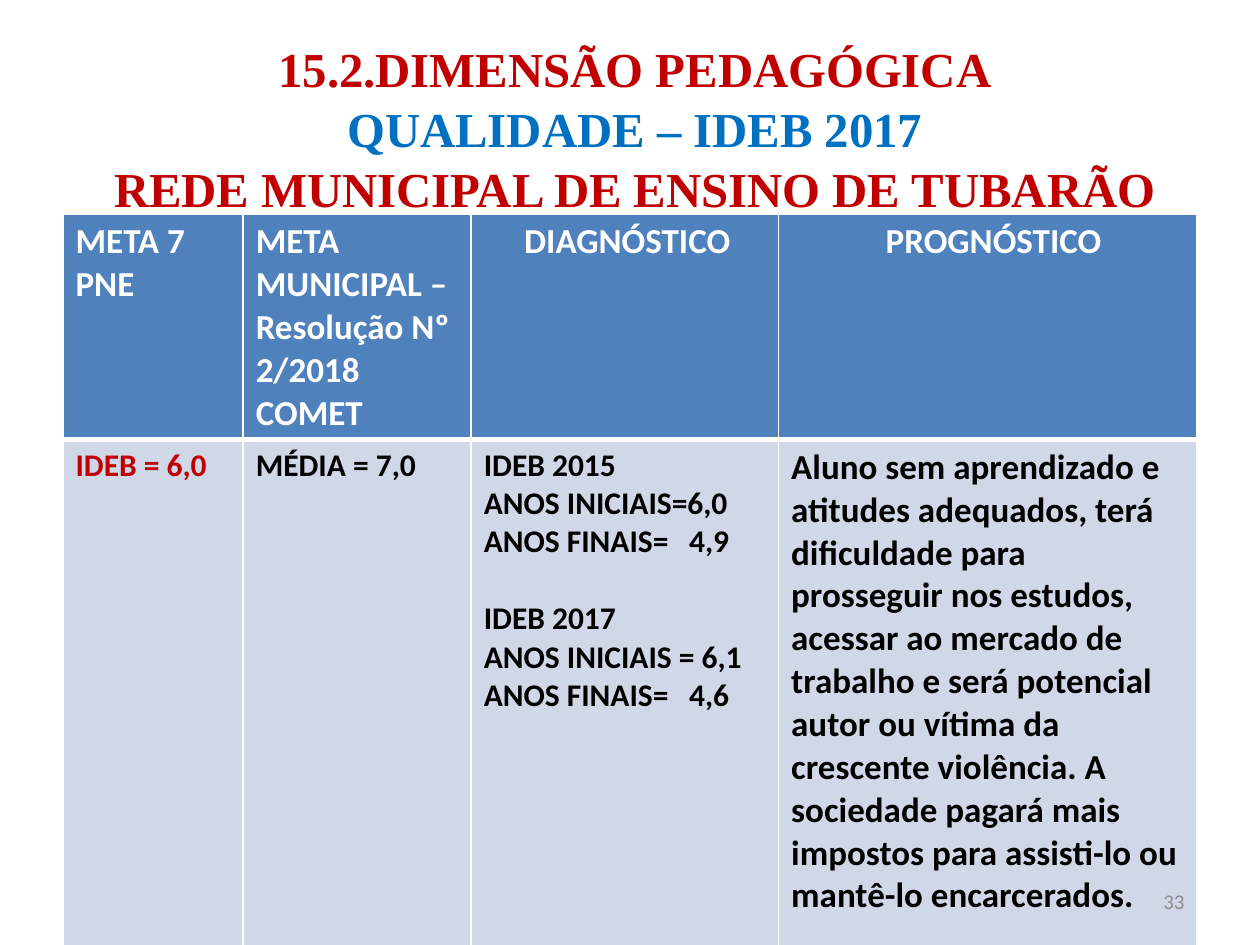
"""Build the slide on the IDEB 2017 goals of the municipal schools."""
import pptx
import pptx.util
import pptx.dml.color
import pptx.enum.text
import pptx.oxml
import pptx.oxml.ns

Inches = pptx.util.Inches
Pt = pptx.util.Pt
Align = pptx.enum.text.PP_ALIGN
Anchor = pptx.enum.text.MSO_ANCHOR


def hue(code):
    return pptx.dml.color.RGBColor.from_string(code)


def write(par, text, size=20, color="000000", font="Calibri", bold=True,
          align=Align.LEFT, pitch=None, before=0):
    par.alignment = align
    par.space_before = Pt(before)
    if pitch:
        par.line_spacing = Pt(pitch)
    run = par.add_run()
    run.text = text
    run.font.size = Pt(size)
    run.font.name = font
    run.font.bold = bold
    run.font.color.rgb = hue(color)


deck = pptx.Presentation()
deck.slide_width, deck.slide_height = Inches(10), Inches(7.5)
slide = deck.slides.add_slide(deck.slide_layouts[6])

title = slide.shapes.add_textbox(Inches(0.51), Inches(0.29), Inches(9), Inches(1.25))
frame = title.text_frame
frame.word_wrap = True
frame.vertical_anchor = Anchor.TOP
frame.margin_top = frame.margin_bottom = frame.margin_right = 0
frame.margin_left = Inches(0.06)
lines = [
    ("15.2.DIMENSÃO PEDAGÓGICA", "C00000"),
    ("QUALIDADE – IDEB 2017", "0070C0"),
    ("REDE MUNICIPAL DE ENSINO DE TUBARÃO", "C00000"),
]
for i, (text, color) in enumerate(lines):
    par = frame.add_paragraph() if i else frame.paragraphs[0]
    write(par, text, size=27.9, color=color, font="Times New Roman",
          align=Align.CENTER, pitch=34.5)

grid = slide.shapes.add_table(2, 4, Inches(0.5), Inches(1.7), Inches(9), Inches(5.81)).table
for col, width in zip(grid.columns, [1.43, 1.81, 2.44, 3.32]):
    col.width = Inches(width)
for row, height in zip(grid.rows, [1.79, 4.02]):
    row.height = Inches(height)

heads = [
    ("META 7 PNE", 0.1),
    ("META MUNICIPAL – Resolução Nº 2/2018 COMET", 0.1),
    ("DIAGNÓSTICO", 0.42),
    ("PROGNÓSTICO", 0.85),
]
for c, (text, left) in enumerate(heads):
    cell = grid.cell(0, c)
    cell.margin_left = Inches(left)
    write(cell.text_frame.paragraphs[0], text, color="FFFFFF")

scores = ["IDEB 2015", "ANOS INICIAIS=6,0", "ANOS FINAIS=\t4,9",
          "IDEB 2017", "ANOS INICIAIS = 6,1", "ANOS FINAIS=\t4,6"]
future = ("Aluno sem aprendizado e atitudes adequados, terá dificuldade para "
          "prosseguir nos estudos, acessar ao mercado de trabalho e será potencial "
          "autor ou vítima da crescente violência. A sociedade pagará mais impostos "
          "para assisti-lo ou mantê-lo encarcerados.")
body = [(["IDEB = 6,0"], 18, "C00000"), (["MÉDIA = 7,0"], 18, "000000"),
        (scores, 18, "000000"), ([future], 20, "000000")]
space = pptx.oxml.ns.nsdecls("a")
for c, (texts, size, color) in enumerate(body):
    frame = grid.cell(1, c).text_frame
    for i, text in enumerate(texts):
        par = frame.add_paragraph() if i else frame.paragraphs[0]
        write(par, text, size=size, color=color, before=22 if i == 3 else 0)
        if "\t" in text:
            stop = f'<a:tabLst {space}><a:tab pos="{Inches(1.63)}" algn="l"/></a:tabLst>'
            par._p.get_or_add_pPr().append(pptx.oxml.parse_xml(stop))

for r, fill in enumerate(["4F81BD", "D0D8E8"]):
    for cell in grid.rows[r].cells:
        cell.fill.solid()
        cell.fill.fore_color.rgb = hue(fill)
        for i, side in enumerate("LRTB"):
            thick = 3 if (r, side) in [(0, "B"), (1, "T")] else 1
            edge = (f'<a:ln{side} {space} w="{Pt(thick)}"><a:solidFill>'
                    f'<a:srgbClr val="FFFFFF"/></a:solidFill></a:ln{side}>')
            cell._tc.get_or_add_tcPr().insert(i, pptx.oxml.parse_xml(edge))

page = slide.shapes.add_textbox(Inches(7.17), Inches(6.95), Inches(2.33), Inches(0.4))
page.text_frame.word_wrap = True
page.text_frame.vertical_anchor = Anchor.MIDDLE
write(page.text_frame.paragraphs[0], "33", size=12, color="8C8C8C", bold=False,
      align=Align.RIGHT)

deck.save("out.pptx")
